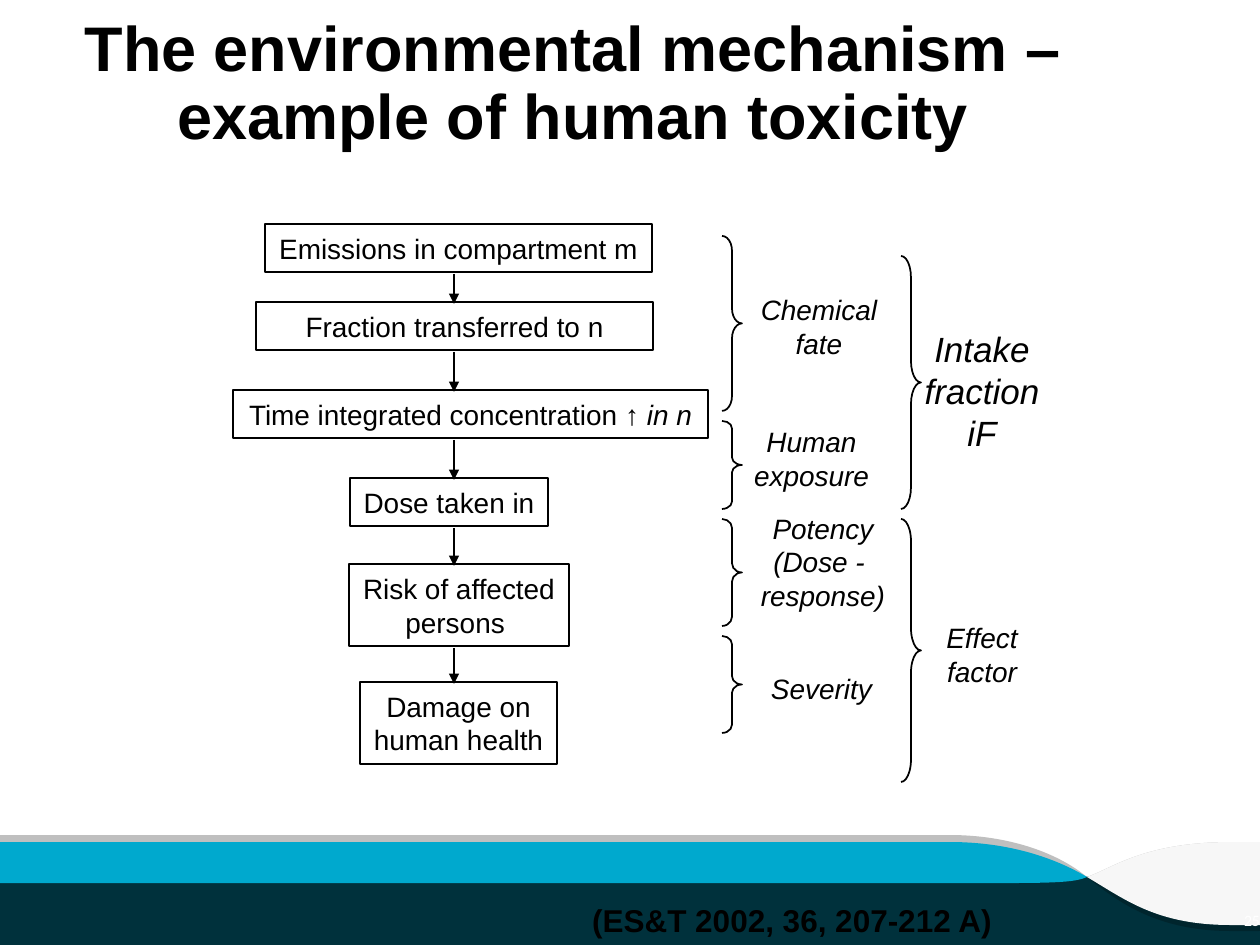
from lxml.etree import SubElement
from pptx import Presentation
from pptx.dml.color import RGBColor
from pptx.enum.shapes import MSO_CONNECTOR, MSO_SHAPE
from pptx.enum.text import MSO_ANCHOR, MSO_AUTO_SIZE, PP_ALIGN
from pptx.oxml.ns import qn
from pptx.util import Emu, Pt

COLORS = {
    "ink": "000000", "white": "FFFFFF", "band": "00313C", "grey": "BFBFBF",
    "shade": "00252D", "blue": "00A9CE", "light": "F7F7F7",
}
BRACE_WIDTH = 20


def px(length):
    return Emu(round(length * 914400 / 126))


def place(box, left, top, width, height):
    """EMU rectangle for a part positioned relative to a region."""
    return [px(v) for v in (box[0] + left, box[1] + top, width, height)]


def color(name):
    return RGBColor.from_string(COLORS[name])


def set_attributes(target, values):
    for name, value in values.items():
        setattr(target, name, value)


def paint(shape, fill=None, line=None):
    shape.shadow.inherit = False
    if fill:
        shape.fill.solid()
        shape.fill.fore_color.rgb = color(fill)
    else:
        shape.fill.background()
    if line:
        shape.line.color.rgb = color(line)
        shape.line.width = Pt(1)
    else:
        shape.line.fill.background()


def style_run(run, size, name="ink", font="Arial", bold=False, italic=False):
    set_attributes(run.font, {"name": font, "size": Pt(size), "bold": bold, "italic": italic})
    run.font.color.rgb = color(name)


def write(shape, text, size=16, wrap=True, anchor=MSO_ANCHOR.MIDDLE,
          align=PP_ALIGN.CENTER, italic_tail="", grow=True, **style):
    """Newlines split paragraphs; vertical tabs are line breaks."""
    frame = shape.text_frame
    fit = MSO_AUTO_SIZE.SHAPE_TO_FIT_TEXT if grow else MSO_AUTO_SIZE.NONE
    set_attributes(frame, {"text": text, "word_wrap": wrap,
                           "vertical_anchor": anchor, "auto_size": fit})
    for paragraph in frame.paragraphs:
        paragraph.alignment = align
        for run in paragraph.runs:
            style_run(run, size, **style)
    if italic_tail:
        run = frame.paragraphs[-1].add_run()
        run.text = italic_tail
        style_run(run, size, italic=True)


def add_arrow(slide, x, start, end):
    arrow = slide.shapes.add_connector(
        MSO_CONNECTOR.STRAIGHT, px(x), px(start), px(x), px(end))
    arrow.line.color.rgb = color("ink")
    arrow.line.width = Pt(1)
    SubElement(arrow.line._get_or_add_ln(), qn("a:tailEnd"), type="triangle")
    SubElement(arrow._element.spPr, qn("a:effectLst"))


def add_wave(slide, box, outlines, fill):
    """Outlines mix corners (x, y) with Bezier curves of three points."""
    builder = None
    for steps in outlines:
        nodes = [(px(box[0] + step[i]), px(box[1] + step[i + 1]))
                 for step in steps for i in range(0, len(step), 2)]
        if builder is None:
            builder = slide.shapes.build_freeform(*nodes[0], scale=1.0)
        else:
            builder.move_to(*nodes[0])
        builder.add_line_segments(nodes[1:], close=True)
    wave = builder.convert_to_shape()
    paint(wave, fill)

    # Join the three segments of each curve into one Bezier
    segments = list(wave._element.iter(qn("a:lnTo")))
    position = 0
    for steps in outlines:
        for step in steps[1:]:
            if len(step) == 6:
                trio = segments[position:position + 3]
                curve = trio[0].makeelement(qn("a:cubicBezTo"))
                trio[0].addprevious(curve)
                for segment in trio:
                    curve.append(segment[0])
                    segment.getparent().remove(segment)
            position += len(step) // 2
        # A closing segment back to the start is not a line of its own
        

def add_footer(slide, box):
    width, height = box[2:]
    cross = (1087, 42)
    lower_lip = [(0, 48), (1002, 48), (1058, 48, 1076, 47, *cross)]
    crest = (1144, 7, 1113, 33, *cross)

    # Bottom band and waves
    band = slide.shapes.add_shape(MSO_SHAPE.RECTANGLE, *place(box, 0, 42, width, height - 42))
    paint(band, "band")
    add_wave(slide, box, [
        [(width, 7), (1232, 7), crest, (width, 42), (width, 96)],
        [cross, (1058, 18, 1009, 0, 950, 0), (0, 0), (0, 42)],
    ], "grey")
    add_wave(slide, box, [
        [cross, (0, 42), *lower_lip],
        [(width, 42), cross, (1118, 67, 1157, 96, 1231, 96), (width, 96)],
    ], "shade")
    add_wave(slide, box, [[cross, (1055, 23, 1009, 7, 950, 7), (0, 7), *lower_lip]], "blue")
    add_wave(slide, box, [
        [(1232, 7), crest, (1126, 65, 1157, 90, 1231, 90), (width, 90), (width, 7)],
    ], "light")

    # Slide number and citation
    number = slide.shapes.add_textbox(*place(box, 1155, 60, 105, 50))
    margins = ("margin_left", "margin_right", "margin_top", "margin_bottom")
    set_attributes(number.text_frame, dict.fromkeys(margins, 0))
    write(number, "25", 9, align=PP_ALIGN.RIGHT, grow=False, name="white", font="Calibri")
    citation = slide.shapes.add_textbox(*place(box, 579, 60, 426, 50))
    write(citation, "(ES&T 2002, 36, 207-212 A)", 18, wrap=False,
          anchor=MSO_ANCHOR.TOP, bold=True)


def add_title(slide, box):
    title = slide.shapes.title
    set_attributes(title, dict(zip(("left", "top", "width", "height"), place(box, 0, 0, *box[2:]))))
    # Rounded outline of the title area
    geometry = SubElement(title._element.spPr, qn("a:prstGeom"), prst="roundRect")
    guides = SubElement(geometry, qn("a:avLst"))
    SubElement(guides, qn("a:gd"), name="adj", fmla="val 12500")
    write(title, "The environmental mechanism – example of human toxicity", 36,
          grow=False, bold=True)
    title.text_frame.paragraphs[0].line_spacing = 0.9


def add_cause_chain(slide, box):
    stages = [
        ("Emissions in compartment m", "", 32, 0, 387, 48),
        ("Fraction transferred to n", "", 23, 78, 397, 48),
        ("Time integrated concentration ", "↑ in n", 0, 166, 475, 48),
        ("Dose taken in", "", 117, 254, 198, 48),
        ("Risk of affected\vpersons ", "", 116, 340, 220, 82),
        ("Damage on\vhuman health", "", 127, 458, 197, 82),
    ]
    for text, tail, *area in stages:
        stage = slide.shapes.add_shape(MSO_SHAPE.RECTANGLE, *place(box, *area))
        paint(stage, line="ink")
        write(stage, text, wrap=tail != "" and False, italic_tail=tail)
    # Each arrow runs from one stage to the next
    for upper, lower in zip(stages, stages[1:]):
        add_arrow(slide, box[0] + 221, box[1] + upper[3] + upper[5] + 2, box[1] + lower[3] + 2)


def add_factors(slide, box):
    braces = [(0, 0, 175), (0, 185, 88), (0, 283, 107), (0, 400, 97),
              (179, 20, 253), (179, 283, 263)]
    for left, top, height in braces:
        brace = slide.shapes.add_shape(
            MSO_SHAPE.RIGHT_BRACE, *place(box, left, top, BRACE_WIDTH, height))
        brace.adjustments[0] = height / 234
        paint(brace, line="ink")

    middle, top_anchor = MSO_ANCHOR.MIDDLE, MSO_ANCHOR.TOP
    labels = [
        ("Chemical\vfate", 16, True, middle, 26, 50, 142, 81),
        ("Human\nexposure", 16, True, middle, -39, 182, 257, 81),
        ("Potency\n(Dose - \vresponse)", 16, False, middle, 26, 269, 150, 113),
        ("Severity", 16, False, top_anchor, 36, 429, 127, 47),
        ("Intake\vfraction iF", 20, True, middle, 189, 85, 142, 139),
        ("Effect\vfactor", 16, True, middle, 189, 378, 142, 81),
    ]
    for text, size, wrap, anchor, *area in labels:
        label = slide.shapes.add_textbox(*place(box, *area))
        write(label, text, size, wrap, anchor, italic=True)


def main():
    presentation = Presentation()
    set_attributes(presentation, {"slide_width": px(1260), "slide_height": px(945)})
    slide = presentation.slides.add_slide(presentation.slide_layouts[5])
    add_footer(slide, (0, 835, 1260, 110))
    add_title(slide, (64, 32, 1018, 107))
    add_cause_chain(slide, (233, 224, 475, 540))
    add_factors(slide, (722, 236, 331, 547))
    presentation.save("out.pptx")


if __name__ == "__main__":
    main()
